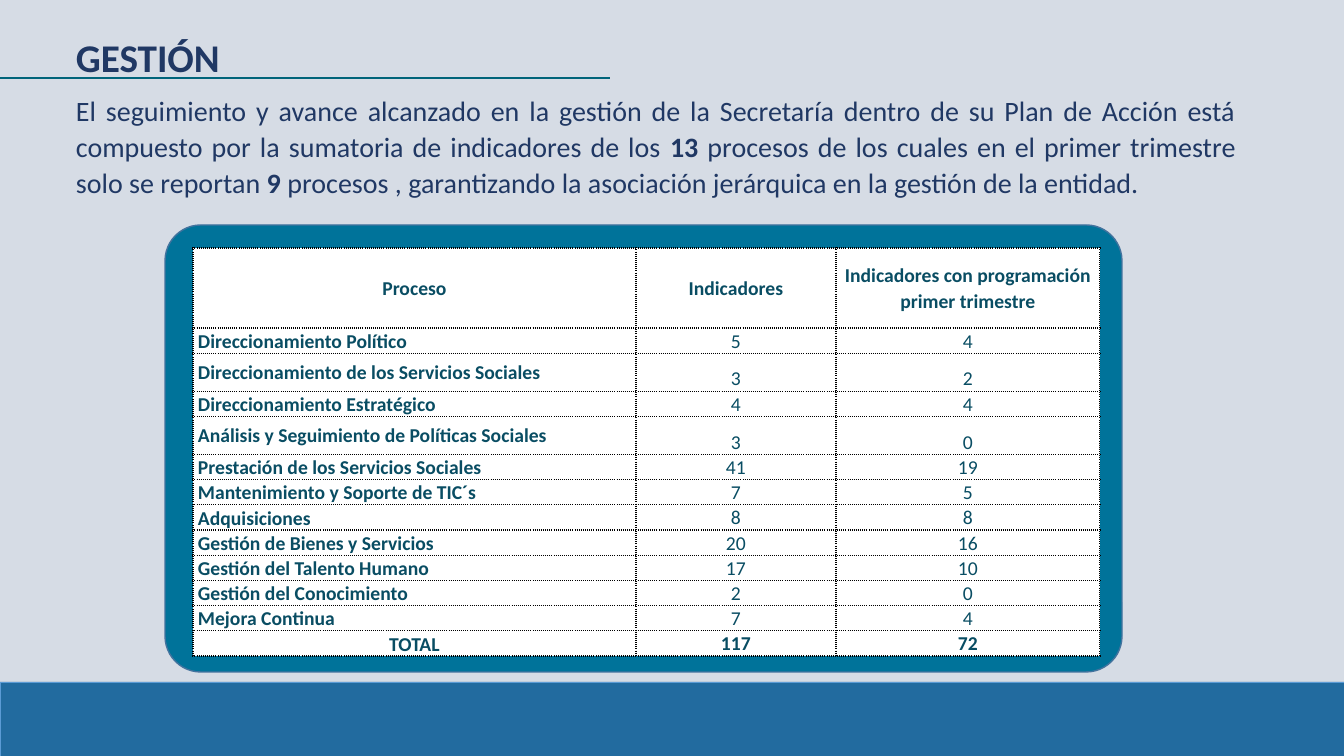
"""Builds the GESTIÓN slide: process indicators for the first quarter."""
from lxml.etree import SubElement
from pptx import Presentation
from pptx.dml.color import RGBColor
from pptx.enum.dml import MSO_LINE
from pptx.enum.shapes import MSO_CONNECTOR, MSO_SHAPE
from pptx.enum.text import MSO_ANCHOR as ANCHOR, MSO_AUTO_SIZE, PP_ALIGN as ALIGN
from pptx.oxml import parse_xml
from pptx.oxml.ns import nsdecls, qn
from pptx.util import Pt

COLORS = {
    "background": "D6DCE5", "footer": "226B9F", "footer_line": "5B9BD5",
    "panel": "00739A", "panel_line": "43739E", "rule": "00647A",
    "heading": "203864", "cell": "FFFFFF", "cell_text": "094D63", "border": "000000",
}
PX = 914400 / 100.8


def px(*lengths):
    return [round(length * PX) for length in lengths]


def style(paragraph, size, color, align, spacing=None):
    paragraph.alignment = align
    paragraph.line_spacing = spacing
    for run in paragraph.runs:
        run.font.name = "Calibri"
        run.font.size = Pt(size)
        run.font.color.rgb = RGBColor.from_string(COLORS[color])


deck = Presentation()
deck.slide_width, deck.slide_height = px(1344, 756)
slide = deck.slides.add_slide(deck.slide_layouts[6])
slide.background.fill.solid()
slide.background.fill.fore_color.rgb = RGBColor.from_string(COLORS["background"])
shapes = slide.shapes

for name, preset, bounds, width in (
    ("footer", MSO_SHAPE.RECTANGLE, (0, 682, 1344, 74), 0.5),
    ("panel", MSO_SHAPE.ROUNDED_RECTANGLE, (165, 225, 957, 447), 1),
):
    block = shapes.add_shape(preset, *px(*bounds))
    block.shadow.inherit = False
    block.fill.solid()
    block.fill.fore_color.rgb = RGBColor.from_string(COLORS[name])
    block.line.color.rgb = RGBColor.from_string(COLORS[name + "_line"])
    block.line.width = Pt(width)
    if name == "panel":
        block.adjustments[0] = 0.08

title = [("GESTIÓN", True)]
summary = [
    ("El seguimiento y avance alcanzado en la gestión de la Secretaría dentro de su Plan "
     "de Acción está compuesto por la sumatoria de indicadores de los ", False),
    ("13 ", True),
    ("procesos de los cuales en el primer trimestre solo se reportan", False),
    (" 9 ", True),
    ("procesos , garantizando la asociación jerárquica en la gestión de la entidad.", False),
]
for parts, bounds, size, spacing in (
    (title, (66, 28, 1078, 57), 28, None),
    (summary, (66, 86, 1180, 119), 20, 1.07),
):
    frame = shapes.add_textbox(*px(*bounds)).text_frame
    frame.word_wrap = True
    frame.auto_size = MSO_AUTO_SIZE.SHAPE_TO_FIT_TEXT
    for words, bold in parts:
        run = frame.paragraphs[0].add_run()
        run.text = words
        run.font.bold = bold
    style(frame.paragraphs[0], size, "heading", ALIGN.JUSTIFY, spacing)

processes = [
    ("Proceso", "Indicadores", "Indicadores con programación primer trimestre"),
    ("Direccionamiento Político", 5, 4),
    ("Direccionamiento de los Servicios Sociales", 3, 2),
    ("Direccionamiento Estratégico", 4, 4),
    ("Análisis y Seguimiento de Políticas Sociales", 3, 0),
    ("Prestación de los Servicios Sociales", 41, 19),
    ("Mantenimiento y Soporte de TIC´s", 7, 5),
    ("Adquisiciones", 8, 8),
    ("Gestión de Bienes y Servicios", 20, 16),
    ("Gestión del Talento Humano", 17, 10),
    ("Gestión del Conocimiento", 2, 0),
    ("Mejora Continua", 7, 4),
    ("TOTAL", 117, 72),
]
last = len(processes) - 1
row_heights = {0: 80, 2: 38, 4: 38}
table = shapes.add_table(len(processes), 3, *px(193, 248, 907, 407)).table
for column, width in zip(table.columns, px(443, 200, 264)):
    column.width = width

for r, values in enumerate(processes):
    table.rows[r].height = px(row_heights.get(r, 25))[0]
    for c, value in enumerate(values):
        cell = table.cell(r, c)
        cell.fill.solid()
        cell.fill.fore_color.rgb = RGBColor.from_string(COLORS["cell"])
        cell.margin_left, cell.margin_right = px(5, 5)
        cell.margin_top = cell.margin_bottom = 0
        cell.vertical_anchor = ANCHOR.MIDDLE if r == 0 or c == 0 else ANCHOR.BOTTOM
        cell.text_frame.text = str(value)
        entry = cell.text_frame.paragraphs[0]
        align = ALIGN.LEFT if c == 0 and 0 < r < last else ALIGN.CENTER
        style(entry, 14, "cell_text", align, 1.07)
        entry.runs[0].font.bold = c == 0 or r in (0, last)
        properties = cell._tc.get_or_add_tcPr()
        for position, side in enumerate("LRTB"):
            properties.insert(position, parse_xml(
                f'<a:ln{side} {nsdecls("a")} w="12700"><a:solidFill>'
                f'<a:srgbClr val="{COLORS["border"]}"/></a:solidFill>'
                f'<a:prstDash val="sysDot"/></a:ln{side}>'))

rule = shapes.add_connector(MSO_CONNECTOR.STRAIGHT, *px(0, 78, 610, 78))
rule.line.color.rgb = RGBColor.from_string(COLORS["rule"])
rule.line.width = Pt(1.5)
rule.line.dash_style = MSO_LINE.SOLID
SubElement(rule._element.spPr, qn("a:effectLst"))

deck.save("out.pptx")
